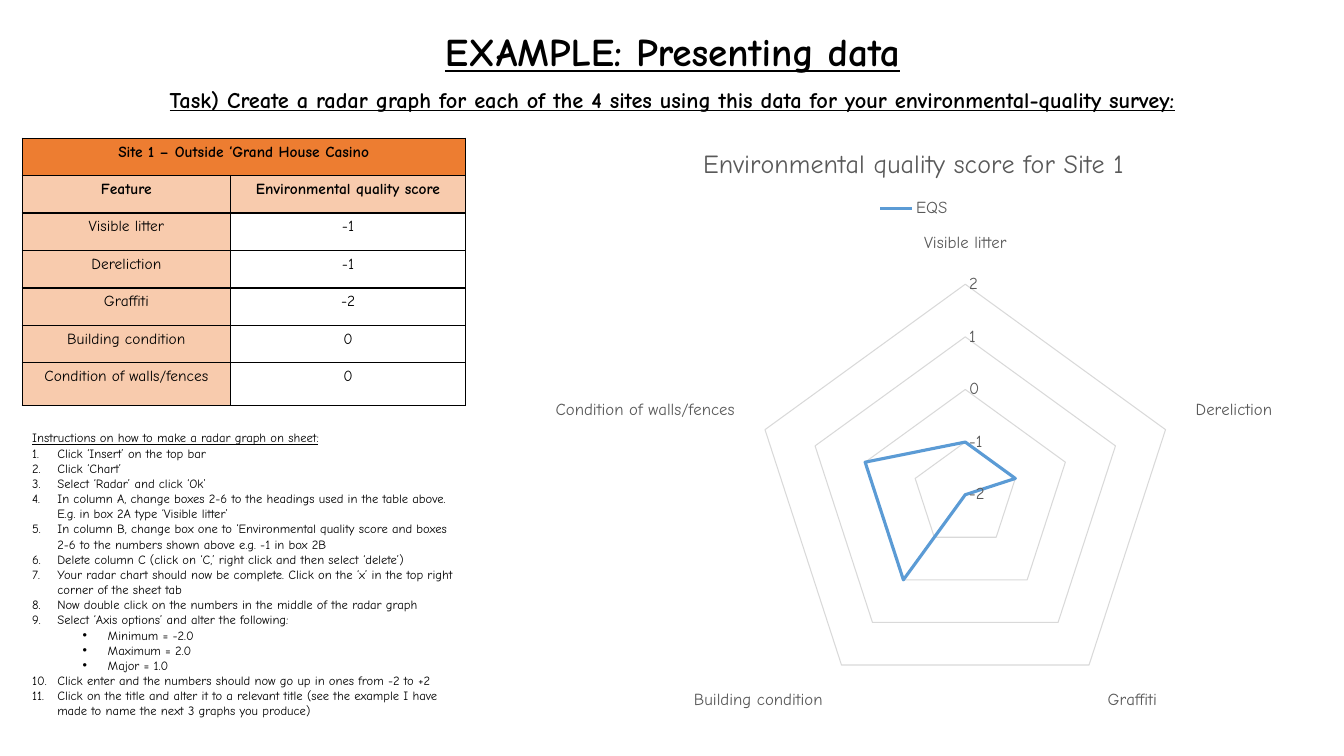
from dataclasses import dataclass

from lxml import etree
from pptx import Presentation
from pptx import util as u
from pptx.chart.data import CategoryChartData
from pptx.dml.color import RGBColor
from pptx.enum import chart as charts, text
from pptx.oxml.ns import qn


@dataclass(frozen=True)
class Theme:
    """Colours, font and type sizes of the slide."""
    font: str = "Comic Neue"
    ink: str = "000000"
    soft_ink: str = "595959"
    grid: str = "D9D9D9"
    header: str = "ED7D31"
    label: str = "F8CBAD"
    series: str = "5B9BD5"
    title: float = 28
    task: float = 16
    table: float = 11
    steps: float = 9
    chart_title: float = 18.6
    chart: float = 12


THEME = Theme()
SLIDE_SIZE = u.Inches(13.33), u.Inches(7.5)
COLUMNS = ROWS = 100
LEFT, SIDE_WIDTH, FULL_WIDTH = 1.65, 33, 96.75

SITE = "Site 1 – Outside ‘Grand House Casino"
HEADINGS = ("Feature", "Environmental quality score")
SCORES = {
    "Visible litter": -1,
    "Dereliction": -1,
    "Graffiti": -2,
    "Building condition": 0,
    "Condition of walls/fences": 0,
}
STEPS_HEADING = "Instructions on how to make a radar graph on sheet:"
STEPS = [
    "Click ‘Insert’ on the top bar",
    "Click ‘Chart’",
    "Select ‘Radar’ and click ‘Ok’",
    "In column A, change boxes 2-6 to the headings used in the table above. "
    "E.g. in box 2A type ‘Visible litter’",
    "In column B, change box one to ‘Environmental quality score and boxes 2-6 "
    "to the numbers shown above e.g. -1 in box 2B",
    "Delete column C (click on ‘C,’ right click and then select ‘delete’)",
    "Your radar chart should now be complete. Click on the ‘x’ in the top right "
    "corner of the sheet tab",
    "Now double click on the numbers in the middle of the radar graph",
    "Select ‘Axis options’ and alter the following:",
    ["Minimum = -2.0", "Maximum = 2.0", "Major = 1.0"],
    "Click enter and the numbers should now go up in ones from -2 to +2",
    "Click on the title and alter it to a relevant title (see the example I have "
    "made to name the next 3 graphs you produce)",
]


def box(column, row, columns, rows):
    """Turn grid columns and rows into left, top, width and height."""
    width, height = SLIDE_SIZE
    return (int(width * column / COLUMNS), int(height * row / ROWS),
            int(width * columns / COLUMNS), int(height * rows / ROWS))


def style_font(font, size, color=THEME.ink, bold=False, underline=False):
    """Apply the theme font with the given size and look."""
    font.name, font.size = THEME.font, u.Pt(size)
    font.bold, font.underline = bold, underline
    font.color.rgb = RGBColor.from_string(color)


def style_line(line, color, width):
    """Give a line a solid colour and a width in points."""
    line.color.rgb = RGBColor.from_string(color)
    line.width = u.Pt(width)


def add_text_frame(slide, area):
    """Add a wrapping text box and return its text frame."""
    frame = slide.shapes.add_textbox(*area).text_frame
    frame.word_wrap = True
    return frame


def add_heading(slide, area, wording, size):
    """Add a centred, bold and underlined heading."""
    paragraph = add_text_frame(slide, area).paragraphs[0]
    paragraph.text = wording
    paragraph.alignment = text.PP_ALIGN.CENTER
    style_font(paragraph.font, size, bold=True, underline=True)


def add_borders(cell):
    """Draw a thin border on all four sides of a cell."""
    properties = cell._tc.get_or_add_tcPr()
    for position, side in enumerate(("lnL", "lnR", "lnT", "lnB")):
        line = etree.Element(qn(f"a:{side}"), w=str(u.Pt(1)))
        fill = etree.SubElement(line, qn("a:solidFill"))
        etree.SubElement(fill, qn("a:srgbClr"), val=THEME.ink)
        properties.insert(position, line)


def fill_cell(cell, wording, color, bold):
    """Write one centred table cell with its fill and border."""
    add_borders(cell)
    if color:
        cell.fill.solid()
        cell.fill.fore_color.rgb = RGBColor.from_string(color)
    else:
        cell.fill.background()
    paragraph = cell.text_frame.paragraphs[0]
    paragraph.text = wording
    paragraph.alignment = text.PP_ALIGN.CENTER
    style_font(paragraph.font, THEME.table, bold=bold)


def add_score_table(slide, area):
    """Add the table of scores, with a slightly taller last row."""
    rows = [(SITE, ""), HEADINGS, *((name, str(score)) for name, score in SCORES.items())]
    table = slide.shapes.add_table(len(rows), 2, *area).table
    table.first_row = table.horz_banding = False
    width, height = area[2:]
    for column, share in zip(table.columns, (0.47, 0.53)):
        column.width = int(width * share)
    for row in table.rows:
        row.height = int(height * 0.14)
    table.rows[len(rows) - 1].height = height - int(height * 0.14) * (len(rows) - 1)
    for row, wordings in enumerate(rows):
        for column, wording in enumerate(wordings):
            label = THEME.label if row == 1 or column == 0 else None
            fill_cell(table.cell(row, column), wording, THEME.header if row == 0 else label, row < 2)
    table.cell(0, 0).merge(table.cell(0, 1))


def add_step(frame, wording, level=0):
    """Add a numbered step, or a bulleted one at the second level."""
    paragraph = frame.add_paragraph()
    paragraph.text, paragraph.level = wording, level
    style_font(paragraph.font, THEME.steps)
    properties = paragraph._p.get_or_add_pPr()
    properties.set("marL", str(u.Inches(0.25 + 0.5 * level)))
    properties.set("indent", str(u.Inches(-0.25)))
    if level:
        bullet_font = etree.Element(qn("a:buFont"), typeface="Arial")
        bullet = etree.Element(qn("a:buChar"), char="•")
        properties.insert(0, bullet_font)
    else:
        bullet = etree.Element(qn("a:buAutoNum"), type="arabicPeriod")
    properties.insert(level, bullet)


def add_instructions(slide, area):
    """Add the underlined heading and the list of steps."""
    frame = add_text_frame(slide, area)
    heading = frame.paragraphs[0]
    heading.text = STEPS_HEADING
    style_font(heading.font, THEME.steps, underline=True)
    for step in STEPS:
        if isinstance(step, list):
            for option in step:
                add_step(frame, option, level=1)
        else:
            add_step(frame, step)


def add_radar_chart(slide, area):
    """Add the radar chart of the scores."""
    data = CategoryChartData()
    data.categories = list(SCORES)
    data.add_series("EQS", list(SCORES.values()))
    chart = slide.shapes.add_chart(charts.XL_CHART_TYPE.RADAR, *area, data).chart
    style_font(chart.font, THEME.chart, THEME.soft_ink)
    title = chart.chart_title.text_frame
    title.text = "Environmental quality score for Site 1"
    style_font(title.paragraphs[0].font, THEME.chart_title, THEME.soft_ink)
    chart.has_legend = True
    chart.legend.position = charts.XL_LEGEND_POSITION.TOP
    chart.legend.include_in_layout = False
    style_font(chart.legend.font, THEME.chart, THEME.soft_ink)
    for axis in (chart.category_axis, chart.value_axis):
        axis.major_tick_mark = axis.minor_tick_mark = charts.XL_TICK_MARK.NONE
        style_font(axis.tick_labels.font, THEME.chart, THEME.soft_ink)
        axis.tick_labels.number_format = "General"
        axis.tick_labels.number_format_is_linked = False
    chart.category_axis.has_major_gridlines = False
    style_line(chart.category_axis.format.line, THEME.grid, 0.75)
    scale = chart.value_axis
    scale.minimum_scale, scale.maximum_scale, scale.major_unit = -2, 2, 1
    scale.format.line.fill.background()
    style_line(scale.major_gridlines.format.line, THEME.grid, 0.75)
    series = chart.plots[0].series[0]
    series.smooth = False
    series.marker.style = charts.XL_MARKER_STYLE.NONE
    style_line(series.format.line, THEME.series, 2.25)


def main():
    """Build the slide and save it."""
    presentation = Presentation()
    presentation.slide_width, presentation.slide_height = SLIDE_SIZE
    slide = presentation.slides.add_slide(presentation.slide_layouts[6])
    add_heading(slide, box(LEFT, 2.93, FULL_WIDTH, 7.6), "EXAMPLE: Presenting data", THEME.title)
    add_heading(slide, box(LEFT, 10.67, FULL_WIDTH, 4.93),
                "Task) Create a radar graph for each of the 4 sites using this data "
                "for your environmental-quality survey:", THEME.task)
    add_score_table(slide, box(LEFT, 18.27, SIDE_WIDTH, 35.4))
    add_radar_chart(slide, box(39.46, 16.4, 57.09, 79.07))
    add_instructions(slide, box(LEFT, 56.27, SIDE_WIDTH, 39.73))
    presentation.save("out.pptx")


if __name__ == "__main__":
    main()
